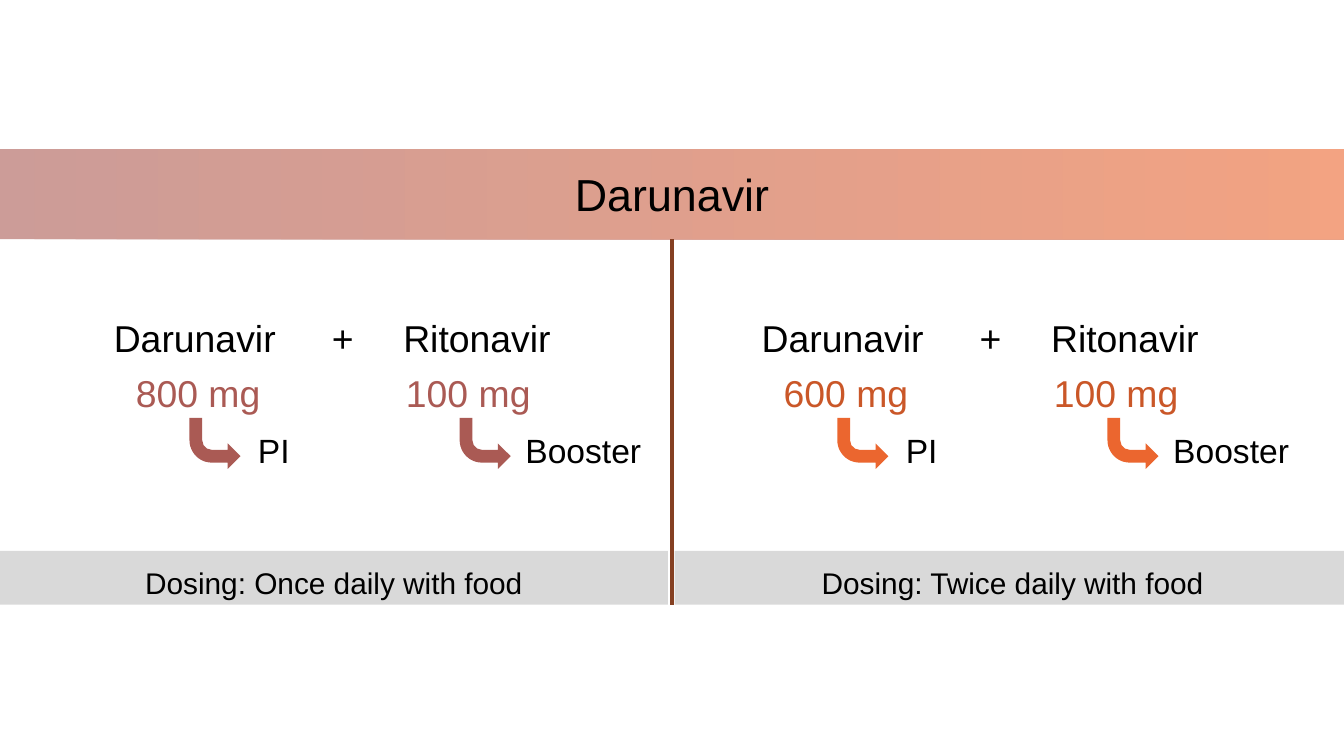
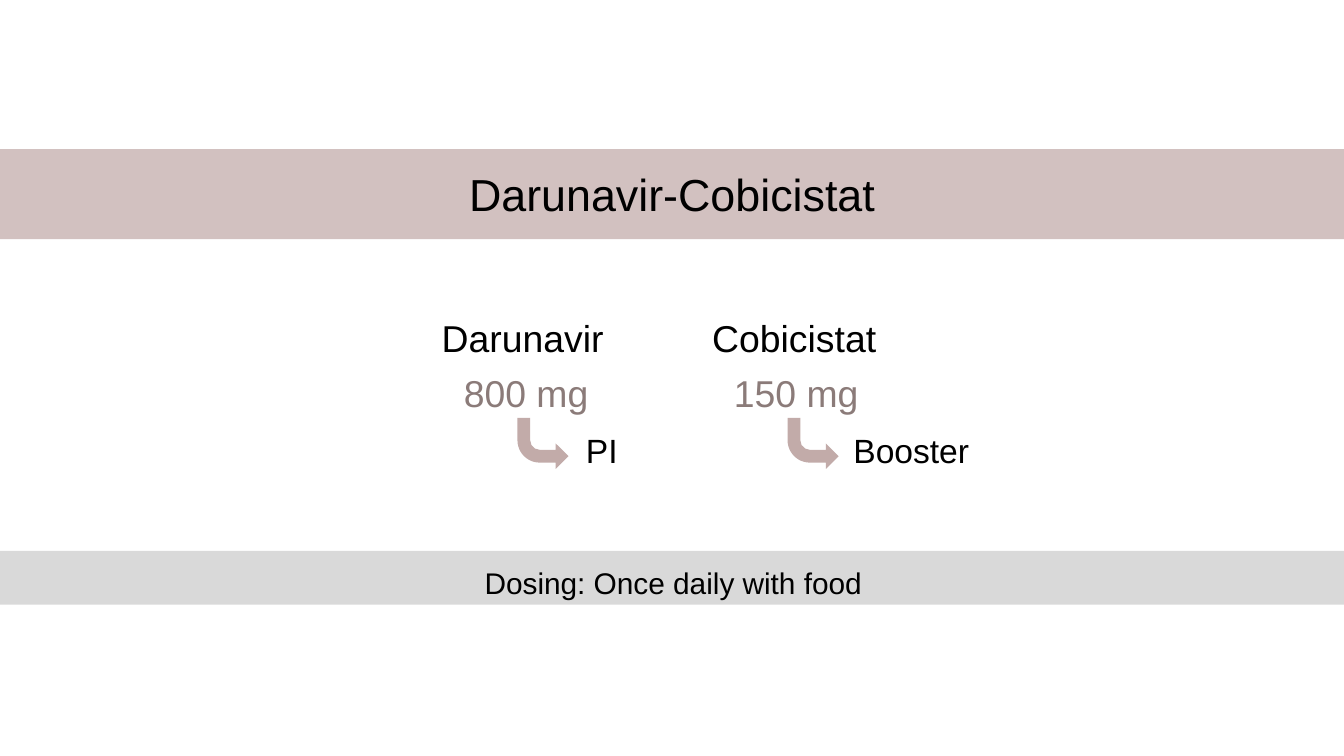
"""Build two slides that compare boosted darunavir regimens."""
from lxml.etree import SubElement
from pptx import Presentation
from pptx.dml.color import RGBColor
from pptx.enum.shapes import MSO_CONNECTOR, MSO_SHAPE
from pptx.enum.text import MSO_ANCHOR, PP_ALIGN
from pptx.oxml.ns import qn
from pptx.util import Inches, Pt

COLORS = {
    "text": "000000",
    "bar": "D9D9D9",
    "divider": "854022",
    "red": "AA5A54",
    "orange": "EB662F",
    "orange_dose": "CA5728",
    "mauve": "C2ABA9",
    "mauve_dose": "8B7B79",
}
FONT = "Arial"
COLUMNS = 100
SLIDE_WIDTH = Inches(10)
SLIDE_HEIGHT = SLIDE_WIDTH * 9 // 16
CELL = SLIDE_WIDTH // COLUMNS
NAME_ROW, DOSE_ROW, ARROW_ROW, ROLE_ROW = 22.9, 27.6, 31.1, 32.3
BAND_ROW, BAND_ROWS = 11.1, 6.7
BAR_ROW, BAR_ROWS = 41, 4
DRUG_STEP = 20.1


def grid(*cells):
    return [round(cell * CELL) for cell in cells]


def rgb(name):
    return RGBColor.from_string(COLORS[name])


def write(box, text, size=20, color="text", align=PP_ALIGN.CENTER, spacing=None):
    frame = box.text_frame
    frame.word_wrap = True
    frame.vertical_anchor = MSO_ANCHOR.MIDDLE
    para = frame.paragraphs[0]
    para.alignment = align
    if spacing:
        para.line_spacing = Pt(spacing)
    span = para.add_run()
    span.text = text
    span.font.name = FONT
    span.font.size = Pt(size)
    span.font.color.rgb = rgb(color)


def add_box(page, kind, cells, fill=None):
    box = page.shapes.add_shape(kind, *grid(*cells))
    box.shadow.inherit = False
    box.line.fill.background()
    if fill:
        box.fill.solid()
        box.fill.fore_color.rgb = rgb(fill)
    else:
        box.fill.background()
    return box


def add_title_band(page, title, colors, opacity):
    cells = (-0.5, BAND_ROW, COLUMNS + 1, BAND_ROWS)
    band = add_box(page, MSO_SHAPE.RECTANGLE, cells, colors[0])
    if len(colors) > 1:
        band.fill.gradient()
        band.fill.gradient_angle = 0
        for stop, color in zip(band.fill.gradient_stops, colors):
            stop.color.rgb = rgb(color)
    for color in band._element.spPr.iter(qn("a:srgbClr")):
        SubElement(color, qn("a:alpha"), val=str(opacity * 1000))
    write(band, title, size=24, spacing=28)
    return band


def add_dosing_bar(page, text, left, width):
    bar = add_box(page, MSO_SHAPE.RECTANGLE, (left, BAR_ROW, width, BAR_ROWS), "bar")
    write(bar, text, size=16, spacing=24)


def add_name(page, text, left, width):
    box = page.shapes.add_textbox(*grid(left, NAME_ROW, width, 5))
    write(box, text, spacing=20)


def add_drug(page, left, dose, role, arrow_color, dose_color):
    """Add a dose with a bent arrow that leads to the drug's role."""
    dose_box = add_box(page, MSO_SHAPE.ROUNDED_RECTANGLE, (left - 6.6, DOSE_ROW, 14.5, 3.3))
    write(dose_box, dose, color=dose_color)
    arrow = add_box(page, MSO_SHAPE.BENT_ARROW, (left, ARROW_ROW, 3.8, 3.8), arrow_color)
    arrow._element.spPr.xfrm.set("flipV", "1")
    role_left = left + (4 if role == "PI" else 3.8)
    role_box = add_box(page, MSO_SHAPE.ROUNDED_RECTANGLE, (role_left, ROLE_ROW, 13.6, 2.4))
    write(role_box, role, size=18, align=PP_ALIGN.LEFT)


def add_regimen(page, left, names, doses, arrow_color, dose_color, centers):
    for name, center in zip(names, centers):
        add_name(page, name, left + center - 11.35, 22.7)
    for index, (dose, role) in enumerate(zip(doses, ("PI", "Booster"))):
        add_drug(page, left + 14.1 + index * DRUG_STEP, dose, role, arrow_color, dose_color)


def add_divider(page, band):
    line = page.shapes.add_connector(
        MSO_CONNECTOR.STRAIGHT, *grid(50, BAND_ROW + BAND_ROWS, 50, BAR_ROW + BAR_ROWS))
    line.begin_connect(band, 2)
    line.line.color.rgb = rgb("divider")
    line.line.width = Pt(2)
    SubElement(line._element.spPr, qn("a:effectLst"))


def add_ritonavir_slide(page):
    band = add_title_band(page, "Darunavir", ("red", "orange"), 60)
    add_dosing_bar(page, "Dosing: Once daily with food", 0, 49.7)
    add_dosing_bar(page, "Dosing: Twice daily with food", 50.2, 50.3)
    regimens = (
        (0, "800 mg", "red", "red"),
        (48.2, "600 mg", "orange", "orange_dose"),
    )
    for left, dose, arrow_color, dose_color in regimens:
        add_regimen(page, left, ("Darunavir", "Ritonavir"), (dose, "100 mg"),
                    arrow_color, dose_color, (14.5, 35.5))
        add_name(page, "+", left + 22.8, 5.4)
    add_divider(page, band)


def add_cobicistat_slide(page):
    add_title_band(page, "Darunavir-Cobicistat", ("mauve",), 73)
    add_dosing_bar(page, "Dosing: Once daily with food", 0, COLUMNS + 0.2)
    add_regimen(page, 24.4, ("Darunavir", "Cobicistat"), ("800 mg", "150 mg"),
                "mauve", "mauve_dose", (14.5, 34.7))


def main():
    deck = Presentation()
    deck.slide_width = SLIDE_WIDTH
    deck.slide_height = SLIDE_HEIGHT
    blank = deck.slide_layouts[6]
    for build in (add_ritonavir_slide, add_cobicistat_slide):
        build(deck.slides.add_slide(blank))
    deck.save("out.pptx")


if __name__ == "__main__":
    main()
